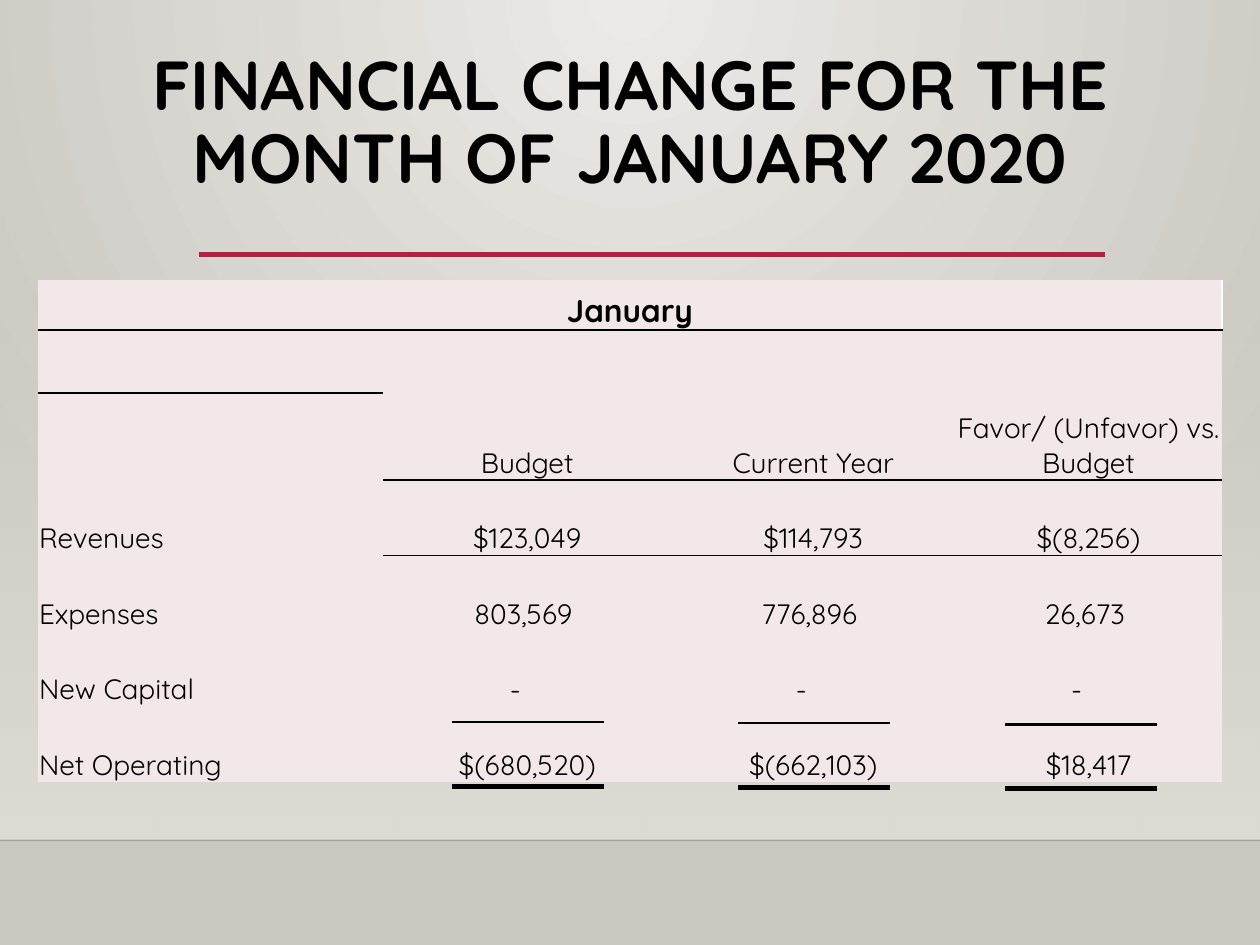
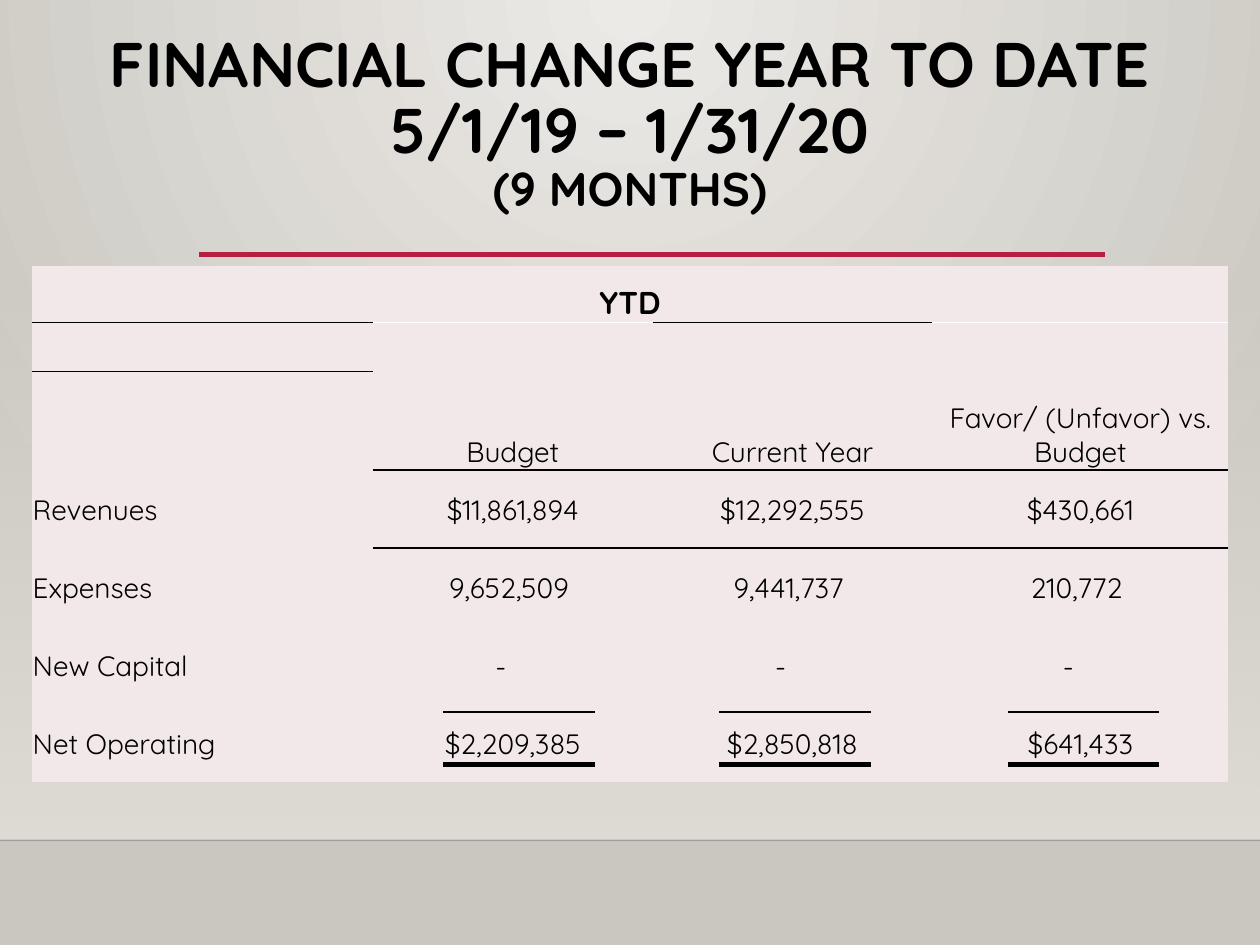
"""Build two slides that compare the budget with the current year."""
from dataclasses import dataclass

from lxml.etree import SubElement as Sub
from pptx import Presentation
from pptx.dml.color import RGBColor as Rgb
from pptx.enum.shapes import MSO_CONNECTOR as Link, MSO_SHAPE as Shape
from pptx.enum.text import MSO_ANCHOR as Anchor, PP_ALIGN as Align
from pptx.oxml import parse_xml
from pptx.oxml.ns import nsdecls, qn
from pptx.util import Inches, Pt


@dataclass(frozen=True)
class Theme:
    font: str = "Quicksand"
    ink: str = "000000"
    white: str = "FFFFFF"
    accent: str = "B71E42"
    cell: str = "F3E8E9"
    glow: str = "ECEAE7"
    edge: str = "CAC7C1"
    band: str = "DFDBD5"
    head: int = 18
    body: int = 16
    plain: str = "{2D5ABB26-0587-4C30-8999-92F81FD0307C}"


HEADS = ("Budget", "Current Year", "Favor/ (Unfavor) vs. Budget")
NAMES = ("Revenues", "Expenses", "New Capital", "Net Operating")
SUM_WIDTH = 1.2


class Deck:
    def __init__(self, theme):
        self.theme = theme
        self.prs = Presentation()
        self.prs.slide_width, self.prs.slide_height = Inches(10), Inches(7.5)
        self.slide = None

    def start(self):
        look = self.theme
        self.slide = self.prs.slides.add_slide(self.prs.slide_layouts[6])
        self.slide.background.fill.solid()
        self.blend(self.slide.element.find(".//" + qn("p:bgPr")),
                   (look.glow, 100), (look.edge, 100),
                   '<a:path path="circle"><a:fillToRect l="43000" t="0" '
                   'r="43000" b="100000"/></a:path>')
        band = self.slide.shapes.add_shape(
            Shape.RECTANGLE, 0, Inches(2.2), Inches(10), Inches(4.46))
        band.shadow.inherit = False
        band.line.fill.background()
        band.fill.solid()
        band.fill.fore_color.rgb = Rgb.from_string(look.band)
        self.blend(band.element.spPr, (look.band, 0), (look.band, 100),
                   '<a:lin ang="5400000" scaled="0"/>')
        self.line(0, 10, 6.67, look.ink, 1, 20)
        self.line(1.58, 8.77, 2.02, look.accent, 2.5)

    def blend(self, host, first, last, shade):
        stops = "".join(
            f'<a:gs pos="{pos}"><a:srgbClr val="{hue}">'
            f'<a:alpha val="{alpha * 1000}"/></a:srgbClr></a:gs>'
            for pos, (hue, alpha) in ((0, first), (100000, last)))
        host.replace(host.find(qn("a:solidFill")), parse_xml(
            f'<a:gradFill {nsdecls("a")} rotWithShape="1">'
            f'<a:gsLst>{stops}</a:gsLst>{shade}</a:gradFill>'))

    def line(self, left, right, y, hue, width, alpha=100):
        link = self.slide.shapes.add_connector(
            Link.STRAIGHT, Inches(left), Inches(y), Inches(right), Inches(y))
        link.line.color.rgb = Rgb.from_string(hue)
        link.line.width = Pt(width)
        props = link.element.spPr
        if alpha < 100:
            tint = props.find(".//" + qn("a:srgbClr"))
            Sub(tint, qn("a:alpha"), val=str(alpha * 1000))
        Sub(props, qn("a:effectLst"))

    def span(self, para, text, size, bold=False):
        run = para.add_run()
        run.text = text
        font = run.font
        font.name, font.size, font.bold = self.theme.font, Pt(size), bold
        font.color.rgb = Rgb.from_string(self.theme.ink)

    def title(self, place, lines):
        frame = self.slide.shapes.add_textbox(*map(Inches, place)).text_frame
        frame.word_wrap = True
        frame.margin_top = Inches(0.07)
        para = frame.paragraphs[0]
        para.alignment, para.line_spacing = Align.CENTER, 0.87
        for row, (text, size) in enumerate(lines):
            if row:
                para.add_line_break()
            self.span(para, text, size, True)

    def border(self, cell, side, hue):
        cell._tc.get_or_add_tcPr().insert(0, parse_xml(
            f'<a:ln{side} {nsdecls("a")} w="12700"><a:solidFill>'
            f'<a:srgbClr val="{hue}"/></a:solidFill></a:ln{side}>'))

    def label(self, cell, text, size, align, bold=False):
        para = cell.text_frame.paragraphs[0]
        para.alignment = align
        self.span(para, text, size, bold)

    def table(self, spot, cols, rows, name, values, anchor, tops):
        look = self.theme
        frame = self.slide.shapes.add_table(
            len(rows), len(cols), *map(Inches, (*spot, sum(cols), sum(rows))))
        grid = frame.table
        grid.first_row = grid.horz_banding = False
        frame.element.find(".//" + qn("a:tableStyleId")).text = look.plain
        for col, width in zip(grid.columns, cols):
            col.width = Inches(width)
        for row, height in zip(grid.rows, rows):
            row.height = Inches(height)
        for cell in grid.iter_cells():
            cell.fill.solid()
            cell.fill.fore_color.rgb = Rgb.from_string(look.cell)
            cell.margin_left = cell.margin_right = Inches(0.01)
            cell.margin_top, cell.margin_bottom = Inches(0.01), 0
            cell.vertical_anchor = Anchor.BOTTOM
        grid.cell(0, 0).merge(grid.cell(0, 3))
        self.label(grid.cell(0, 0), name, look.head, Align.CENTER, True)
        for col, hue in enumerate(tops):
            self.border(grid.cell(1, col), "T", hue)
        for col, head in enumerate(HEADS, 1):
            cell = grid.cell(1, col)
            cell.merge(grid.cell(3, col))
            self.label(cell, head, look.body, Align.CENTER)
            self.border(grid.cell(4, col), "T", look.ink)
        for row, (item, line) in enumerate(zip(NAMES, values), 4):
            for col, text in enumerate((item, *line)):
                cell = grid.cell(row, col)
                cell.vertical_anchor = anchor
                self.label(cell, text, look.body,
                           Align.CENTER if col else Align.LEFT)
                if text == "-":
                    cell.margin_right = Inches(0.2)
                elif col and "$" not in text:
                    cell.margin_right = Inches(0.07)
        return grid

    def sums(self, lefts, y, gap, step=0):
        for col, left in enumerate(lefts):
            foot = y + col * step
            for level, width in ((foot, 3), (foot - gap, 1.25)):
                self.line(left, left + SUM_WIDTH, level, self.theme.ink, width)


def main():
    look = Theme()
    deck = Deck(look)

    deck.start()
    deck.title((0.9, 0.35, 8.2, 1.56), (
        ("FINANCIAL CHANGE FOR THE", 39.6), ("MONTH OF JANUARY 2020", 39.6)))
    grid = deck.table(
        (0.3, 2.22), (2.74, 2.29, 2.25, 2.12),
        (0.4, 0.5, 0.34, 0.35, *[0.6] * 4), "January", (
            ("$123,049", "$114,793", "$(8,256)"),
            ("803,569", "776,896", "26,673"),
            ("-", "-", "-"),
            ("$(680,520)", "$(662,103)", "$18,417")),
        Anchor.BOTTOM, (look.ink,) * 4)
    deck.border(grid.cell(0, 0), "R", look.white)
    deck.sums((3.59, 5.86, 7.98), 6.24, 0.51, 0.01)

    deck.start()
    deck.title((0.6, 0.21, 8.8, 1.8), (
        ("FINANCIAL CHANGE YEAR TO DATE", 36), ("5/1/19 – 1/31/20", 36),
        ("(9 MONTHS)", 27)))
    deck.table(
        (0.25, 2.11), (2.71, 2.22, 2.22, 2.35),
        (0.45, *[0.39] * 3, *[0.62] * 4), "YTD", (
            ("$11,861,894", "$12,292,555", "$430,661"),
            ("9,652,509", "9,441,737", "210,772"),
            ("-", "-", "-"),
            ("$2,209,385", "$2,850,818", "$641,433")),
        Anchor.MIDDLE, (look.ink, look.white) * 2)
    deck.sums((3.52, 5.71, 8), 6.07, 0.42)

    deck.prs.save("out.pptx")


if __name__ == "__main__":
    main()
